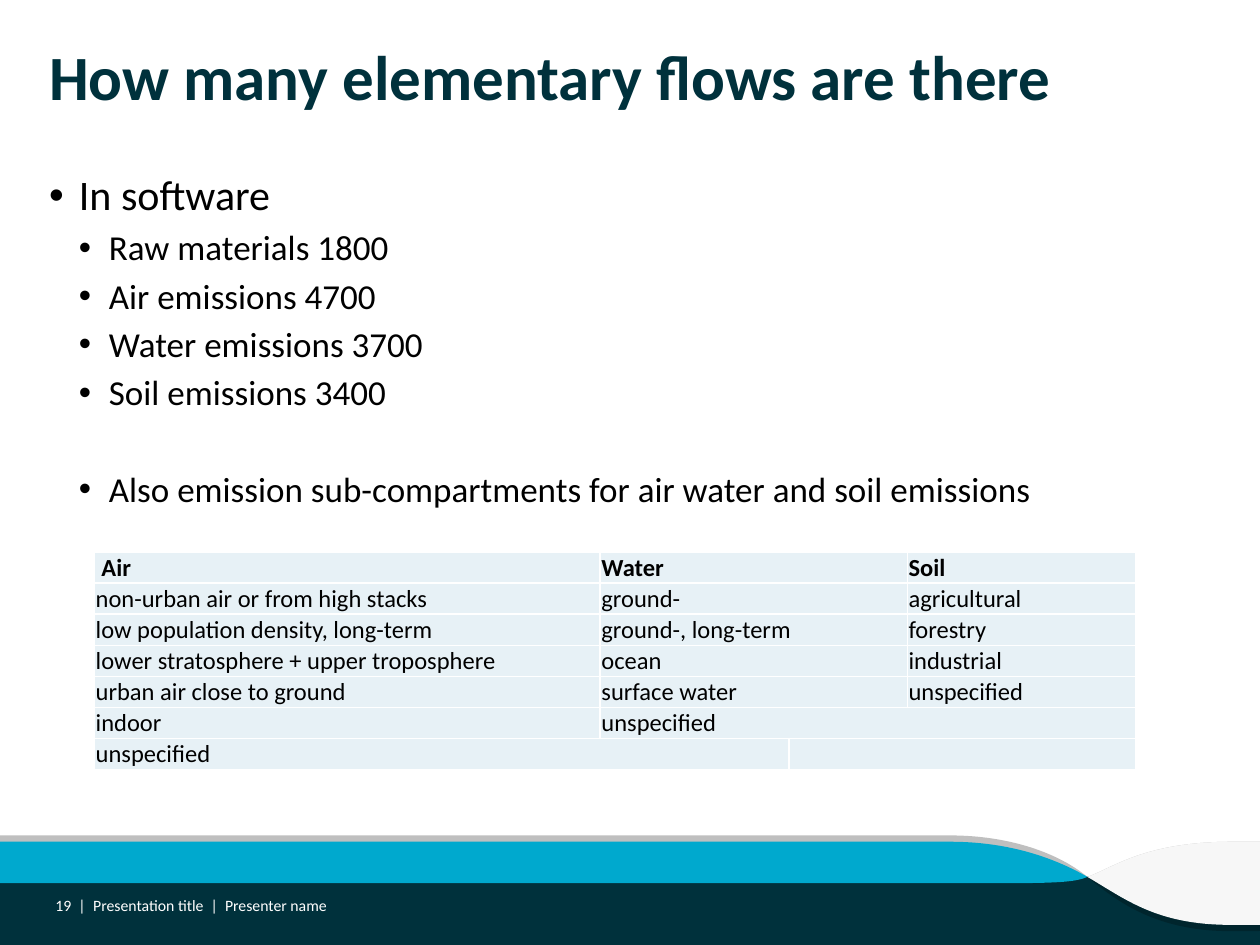
from dataclasses import dataclass

from lxml.etree import SubElement
from pptx import Presentation
from pptx.dml.color import RGBColor
from pptx.enum.shapes import MSO_SHAPE as SHAPE
from pptx.enum.text import MSO_ANCHOR as ANCHOR, MSO_AUTO_SIZE as AUTO, PP_ALIGN as ALIGN
from pptx.oxml.ns import qn
from pptx.util import Pt


@dataclass(frozen=True)
class Theme:
    font: str = "Calibri"
    navy: str = "00313C"
    deep: str = "00252D"
    cyan: str = "00A9CE"
    grey: str = "BFBFBF"
    pale: str = "F7F7F7"
    cell: str = "E7F1F6"
    black: str = "000000"
    white: str = "FFFFFF"
    title: int = 36
    levels: tuple = (24, 20)
    table: int = 14
    footer: int = 9


def pairs(part):
    return [(Pt(x), Pt(y)) for x, y in zip(part[::2], part[1::2])]


def bend(sp, parts):
    """Join the three line segments of each six-number part into one cubic."""
    lines = sp._element.iter(qn("a:lnTo"))
    lines = iter(list(lines))
    for part in parts:
        first, *others = [next(lines) for _ in pairs(part)]
        if others:
            first.tag = qn("a:cubicBezTo")
            for line in others:
                first.append(line[0])
                line.getparent().remove(line)


class SlideBuilder:
    def __init__(self, slide, theme):
        self.slide, self.theme = slide, theme

    def paint(self, sp, color):
        sp.fill.solid()
        sp.fill.fore_color.rgb = RGBColor.from_string(color)
        sp.line.fill.background()
        sp.shadow.inherit = False

    def rect(self, x, y, w, h, color):
        sp = self.slide.shapes.add_shape(SHAPE.RECTANGLE, Pt(x), Pt(y), Pt(w), Pt(h))
        self.paint(sp, color)

    def wave(self, color, *contours):
        """Parts of a contour are points or, with six numbers, cubic curves."""
        builder, segments = None, []
        for start, *parts in contours:
            origin = pairs(start)[0]
            if builder is None:
                builder = self.slide.shapes.build_freeform(*origin)
            else:
                builder.move_to(*origin)
            points = [point for part in parts for point in pairs(part)]
            builder.add_line_segments(points, close=True)
            segments += parts
        sp = builder.convert_to_shape()
        bend(sp, segments)
        self.paint(sp, color)

    def run(self, p, text, size, color, bold=False):
        r = p.add_run()
        r.text = text
        r.font.name, r.font.size, r.font.bold = self.theme.font, Pt(size), bold
        r.font.color.rgb = RGBColor.from_string(color)

    def frame(self, sp, anchor=ANCHOR.TOP):
        tf = sp.text_frame
        tf.word_wrap, tf.auto_size, tf.vertical_anchor = True, AUTO.NONE, anchor
        tf.margin_left = tf.margin_top = tf.margin_right = tf.margin_bottom = 0
        return tf

    def title(self, x, y, w, h, text):
        sp = self.slide.shapes.title
        sp.left, sp.top, sp.width, sp.height = Pt(x), Pt(y), Pt(w), Pt(h)
        p = self.frame(sp).paragraphs[0]
        p.alignment = ALIGN.LEFT
        self.run(p, text, self.theme.title, self.theme.navy, bold=True)

    def label(self, x, y, w, h, text, align=ALIGN.LEFT):
        sp = self.slide.shapes.add_textbox(Pt(x), Pt(y), Pt(w), Pt(h))
        p = self.frame(sp, ANCHOR.MIDDLE).paragraphs[0]
        p.alignment = align
        self.run(p, text, self.theme.footer, self.theme.white)

    def bullets(self, x, y, w, h, items, indent=17.1):
        """Items are (level, space before, text)."""
        sp = self.slide.shapes.add_textbox(Pt(x), Pt(y), Pt(w), Pt(h))
        tf = self.frame(sp)
        for i, (level, before, text) in enumerate(items):
            p = tf.add_paragraph() if i else tf.paragraphs[0]
            p.level, p.line_spacing, p.space_before = level, 0.9, Pt(before)
            pPr = p._p.get_or_add_pPr()
            pPr.set("marL", str(Pt(indent * (level + 1))))
            pPr.set("indent", str(-Pt(indent)))
            SubElement(pPr, qn("a:buFont")).set("typeface", "Arial")
            SubElement(pPr, qn("a:buChar")).set("char", "•")
            self.run(p, text, self.theme.levels[level], self.theme.black)

    def cell_style(self, cell):
        tcPr = cell._tc.get_or_add_tcPr()
        for side in ("lnL", "lnR", "lnT", "lnB"):
            ln = SubElement(tcPr, qn(f"a:{side}"), w=str(Pt(1)))
            fill = SubElement(ln, qn("a:solidFill"))
            SubElement(fill, qn("a:srgbClr")).set("val", self.theme.white)
        cell.fill.solid()
        cell.fill.fore_color.rgb = RGBColor.from_string(self.theme.cell)
        cell.vertical_anchor = ANCHOR.BOTTOM
        cell.margin_left = cell.margin_top = cell.margin_right = Pt(0.7)
        cell.margin_bottom = 0

    def table(self, x, y, widths, row_height, rows, merges):
        """Merges are (row, first column, last column)."""
        gf = self.slide.shapes.add_table(len(rows), len(widths), Pt(x), Pt(y),
                                         Pt(sum(widths)), Pt(row_height * len(rows)))
        tbl = gf.table
        tbl.first_row = tbl.horz_banding = False
        for col, width in zip(tbl.columns, widths):
            col.width = Pt(width)
        for i, row in enumerate(rows):
            tbl.rows[i].height = Pt(row_height)
            for j, text in enumerate(row):
                cell = tbl.cell(i, j)
                self.cell_style(cell)
                p = cell.text_frame.paragraphs[0]
                if text:
                    self.run(p, text, self.theme.table, self.theme.black, bold=i == 0)
                else:
                    SubElement(p._p, qn("a:endParaRPr")).set("sz", str(self.theme.table * 100))
        for i, first, last in merges:
            tbl.cell(i, first).merge(tbl.cell(i, last))
        return tbl


def draw_waves(b):
    t = b.theme
    right, left_end, band_end = 720, 542.9, 572.4
    high, top, mid, low = 477.4, 481, 501.1, 504.7
    knot = (621.4, mid)
    crest = (653.8, top, 635.8, 496.1, *knot)
    tail = (604.8, low, 614.9, 504, *knot)
    b.rect(0, mid, right, 540 - mid, t.navy)
    b.wave(t.grey,
           [(right, top), (704.2, top), crest, (right, mid), (right, 532.1)],
           [(left_end, high), (0, high), (0, mid), knot,
            (604.8, 487.4, 576.7, high, left_end, high)])
    b.wave(t.deep,
           [knot, (0, mid), (0, low), (band_end, low), tail],
           [(right, mid), knot, (638.6, 515.5, 661, 532.1, 703.4, 532.1), (right, 532.1)])
    b.wave(t.cyan,
           [knot, (602.6, 490.3, 576.7, top, left_end, top),
            (0, top), (0, low), (band_end, low), tail])
    b.wave(t.pale,
           [(704.2, top), crest, (643.7, 514.1, 661, 528.5, 703.4, 528.5),
            (right, 528.5), (right, top)])


def main():
    prs = Presentation()
    prs.slide_width, prs.slide_height = Pt(720), Pt(540)
    b = SlideBuilder(prs.slides.add_slide(prs.slide_layouts[5]), Theme())

    draw_waves(b)
    b.title(28, 21.6, 666, 67, "How many elementary flows are there")
    b.bullets(28, 99.8, 666, 360, [
        (0, 0, "In software"),
        (1, 6, "Raw materials 1800"),
        (1, 6, "Air emissions 4700"),
        (1, 6, "Water emissions 3700"),
        (1, 6, "Soil emissions 3400"),
        (1, 33.6, "Also emission sub-compartments for air water and soil emissions"),
    ])
    b.label(53.3, 512, 479, 10, "Presentation title  |  Presenter name")
    b.label(26, 512, 23, 10, "19  |", ALIGN.RIGHT)

    rows = [
        ("Air", "Water", "", "Soil"),
        ("non-urban air or from high stacks", "ground-", "", "agricultural"),
        ("low population density, long-term", "ground-, long-term", "", "forestry"),
        ("lower stratosphere + upper troposphere", "ocean", "", "industrial"),
        ("urban air close to ground", "surface water", "", "unspecified"),
        ("indoor", "unspecified", "", ""),
        ("unspecified", "", "", ""),
    ]
    merges = [(i, 1, 2) for i in range(5)] + [(5, 1, 3), (6, 0, 1), (6, 2, 3)]
    tbl = b.table(54, 315.5, (289, 108, 67.5, 130.3), 17.6, rows, merges)
    tbl.cell(0, 0).margin_left = Pt(4)
    prs.save("out.pptx")


if __name__ == "__main__":
    main()
